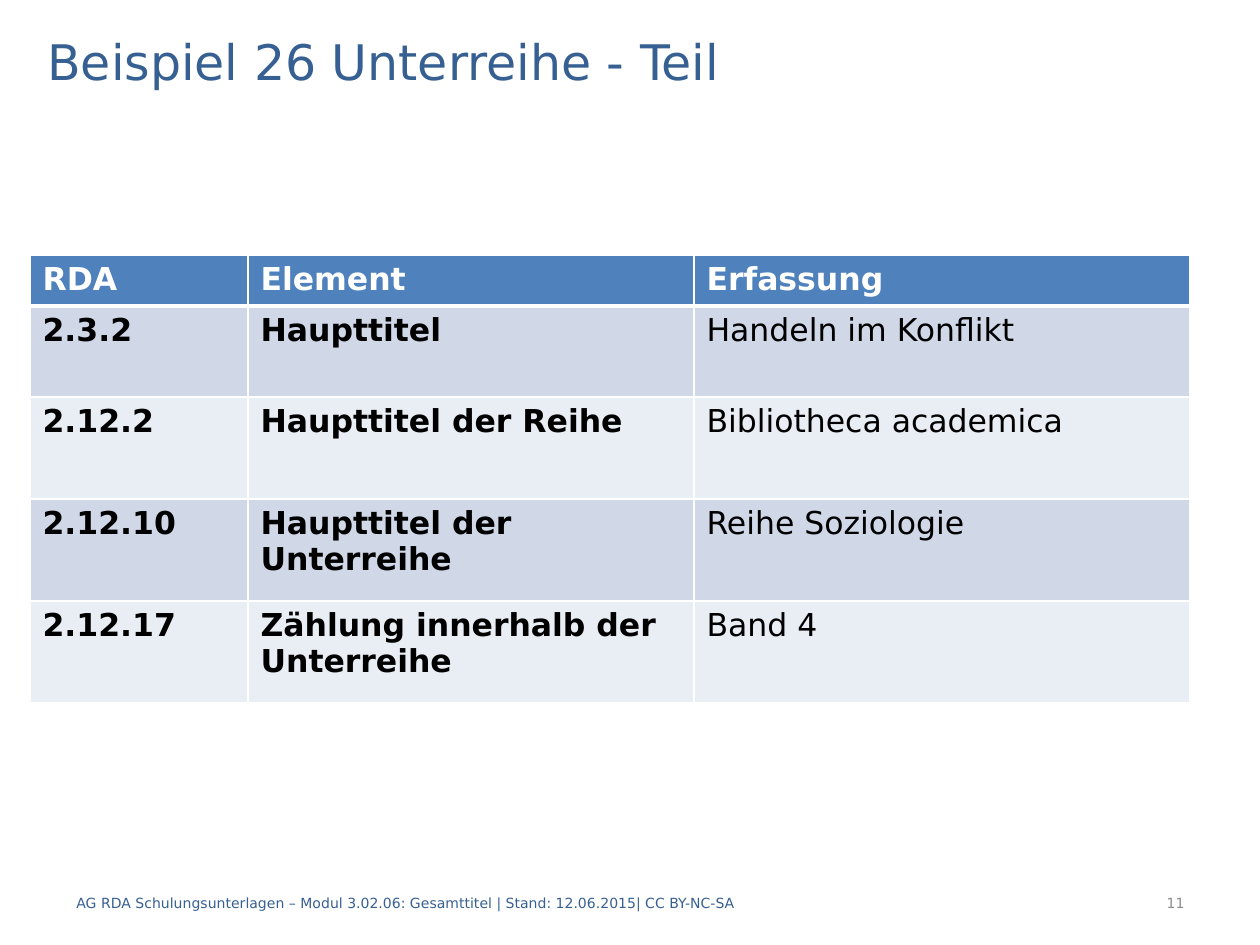
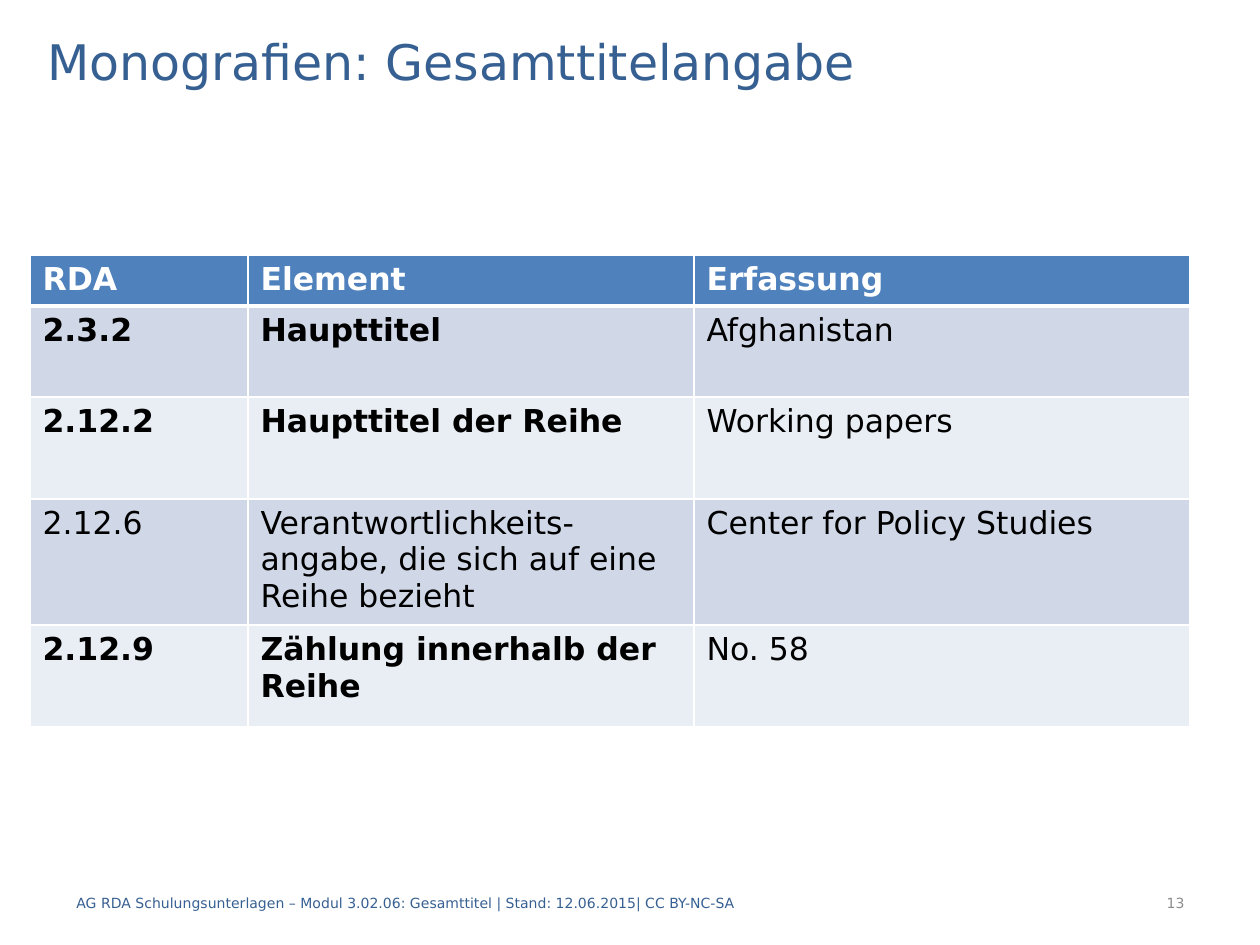
"""Build two cataloguing example slides, each with a title, a table and a footer."""
import dataclasses

import lxml.etree
import pptx
import pptx.dml.color
import pptx.enum.text
import pptx.oxml.ns
import pptx.util

EMU_PER_PX = 914400 / 126
EMU_PER_PT = 12700
FONT = "DejaVu Sans"
NAVY, GREY, BLACK, WHITE = "376092", "8C8C8C", "000000", "FFFFFF"
HEADER_FILL = "4F81BD"
BAND_FILLS = ("D0D8E8", "E9EDF4")
FOOTER = "AG RDA Schulungsunterlagen – Modul 3.02.06: Gesamttitel | Stand: 12.06.2015| CC BY-NC-SA"
HEADINGS = ("RDA", "Element", "Erfassung")
TABLE_LEFT, TABLE_TOP = 30, 255
COLUMN_WIDTHS = (218, 446, 496)
ROW_HEIGHTS = (51, 91, 102, 102, 102)
LEFT = pptx.enum.text.PP_ALIGN.LEFT
RIGHT = pptx.enum.text.PP_ALIGN.RIGHT


@dataclasses.dataclass(frozen=True)
class TextSpot:
    """A text box place in px with its type size, colour and alignment."""
    left: int
    top: int
    width: int
    height: int
    size: int
    colour: str
    align: pptx.enum.text.PP_ALIGN = LEFT


@dataclasses.dataclass(frozen=True)
class Entry:
    """One table row; required elements are set in bold."""
    rule: str
    element: str
    value: str
    required: bool = True


@dataclasses.dataclass(frozen=True)
class Example:
    """The content of one slide."""
    title: str
    number: int
    entries: tuple[Entry, ...]


TITLE_SPOT = TextSpot(35, 25, 1191, 71, 28, NAVY)
FOOTER_SPOT = TextSpot(64, 878, 922, 50, 8, NAVY)
NUMBER_SPOT = TextSpot(997, 878, 200, 50, 8, GREY, RIGHT)

EXAMPLES = (
    Example("Beispiel 26 Unterreihe - Teil", 11, (
        Entry("2.3.2", "Haupttitel", "Handeln im Konflikt"),
        Entry("2.12.2", "Haupttitel der Reihe", "Bibliotheca academica"),
        Entry("2.12.10", "Haupttitel der Unterreihe", "Reihe Soziologie"),
        Entry("2.12.17", "Zählung innerhalb der Unterreihe", "Band 4"),
    )),
    Example("Monografien: Gesamttitelangabe", 13, (
        Entry("2.3.2", "Haupttitel", "Afghanistan"),
        Entry("2.12.2", "Haupttitel der Reihe", "Working papers"),
        Entry("2.12.6", "Verantwortlichkeits-angabe, die sich auf eine Reihe bezieht",
              "Center for Policy Studies", required=False),
        Entry("2.12.9", "Zählung innerhalb der Reihe", "No. 58"),
    )),
)


def px(length: int) -> pptx.util.Emu:
    """Turn px into EMU."""
    return pptx.util.Emu(round(length * EMU_PER_PX))


def rgb(value: str) -> pptx.dml.color.RGBColor:
    """Turn a hex string into a colour."""
    return pptx.dml.color.RGBColor.from_string(value)


def apply_format(target, values: dict) -> None:
    """Set each named attribute on the target."""
    for name, value in values.items():
        setattr(target, name, value)


def write(frame, text: str, size: int, colour: str, bold: bool = False,
          align: pptx.enum.text.PP_ALIGN = LEFT) -> None:
    """Write one formatted paragraph into a text frame."""
    para = frame.paragraphs[0]
    para.alignment = align
    span = para.add_run()
    span.text = text
    apply_format(span.font, {"name": FONT, "size": pptx.util.Pt(size), "bold": bold})
    span.font.color.rgb = rgb(colour)


def add_text(page, spot: TextSpot, text: str) -> None:
    """Add a vertically centred text box."""
    box = page.shapes.add_textbox(*map(px, (spot.left, spot.top, spot.width, spot.height)))
    apply_format(box.text_frame, {
        "word_wrap": True,
        "vertical_anchor": pptx.enum.text.MSO_ANCHOR.MIDDLE,
    })
    write(box.text_frame, text, spot.size, spot.colour, align=spot.align)


def add_borders(cell, top: int, bottom: int) -> None:
    """Draw white cell borders, with widths in points for top and bottom."""
    properties = cell._tc.get_or_add_tcPr()
    for index, (side, width) in enumerate({"L": 1, "R": 1, "T": top, "B": bottom}.items()):
        line = lxml.etree.Element(pptx.oxml.ns.qn(f"a:ln{side}"), w=str(width * EMU_PER_PT))
        fill = lxml.etree.SubElement(line, pptx.oxml.ns.qn("a:solidFill"))
        lxml.etree.SubElement(fill, pptx.oxml.ns.qn("a:srgbClr"), val=WHITE)
        properties.insert(index, line)


def add_cell(cell, text: str, row: int, bold: bool) -> None:
    """Fill, border and label one cell according to its row."""
    cell.fill.solid()
    cell.fill.fore_color.rgb = rgb(BAND_FILLS[(row - 1) % 2] if row else HEADER_FILL)
    add_borders(cell, top=3 if row == 1 else 1, bottom=1 if row else 3)
    write(cell.text_frame, text, 18, BLACK if row else WHITE, bold)


def add_entries(page, entries: tuple[Entry, ...]) -> None:
    """Add the table of catalogue entries below its headings."""
    table = page.shapes.add_table(
        len(entries) + 1, len(HEADINGS), px(TABLE_LEFT), px(TABLE_TOP),
        px(sum(COLUMN_WIDTHS)), px(sum(ROW_HEIGHTS))).table
    for column, width in zip(table.columns, COLUMN_WIDTHS):
        column.width = px(width)
    for row, height in zip(table.rows, ROW_HEIGHTS):
        row.height = px(height)
    for column, heading in enumerate(HEADINGS):
        add_cell(table.cell(0, column), heading, 0, True)
    for row, entry in enumerate(entries, start=1):
        for column, text in enumerate((entry.rule, entry.element, entry.value)):
            add_cell(table.cell(row, column), text, row, entry.required and column < 2)


def add_example(deck, example: Example) -> None:
    """Add one complete slide."""
    page = deck.slides.add_slide(deck.slide_layouts[6])
    add_text(page, TITLE_SPOT, example.title)
    add_text(page, FOOTER_SPOT, FOOTER)
    add_text(page, NUMBER_SPOT, str(example.number))
    add_entries(page, example.entries)


def main() -> None:
    """Build and save the deck."""
    deck = pptx.Presentation()
    apply_format(deck, {"slide_width": px(1260), "slide_height": px(945)})
    for example in EXAMPLES:
        add_example(deck, example)
    deck.save("out.pptx")


if __name__ == "__main__":
    main()
